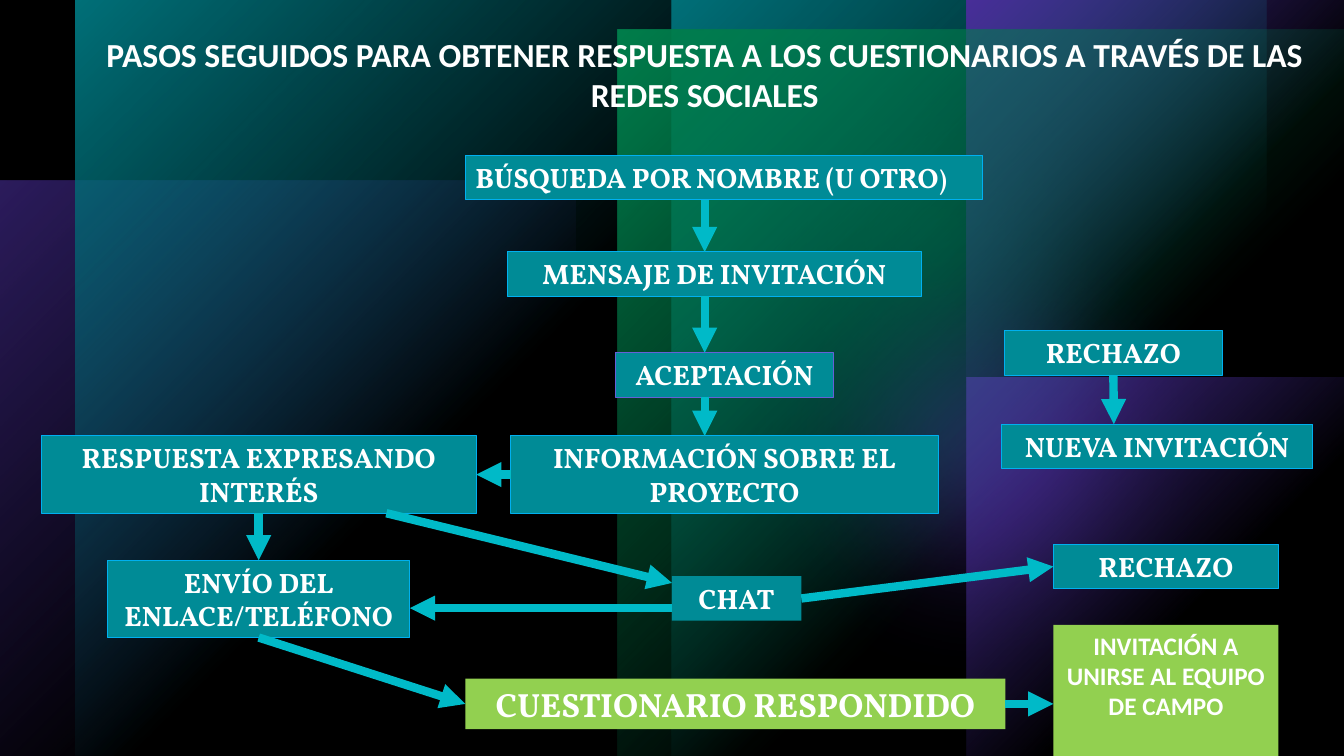
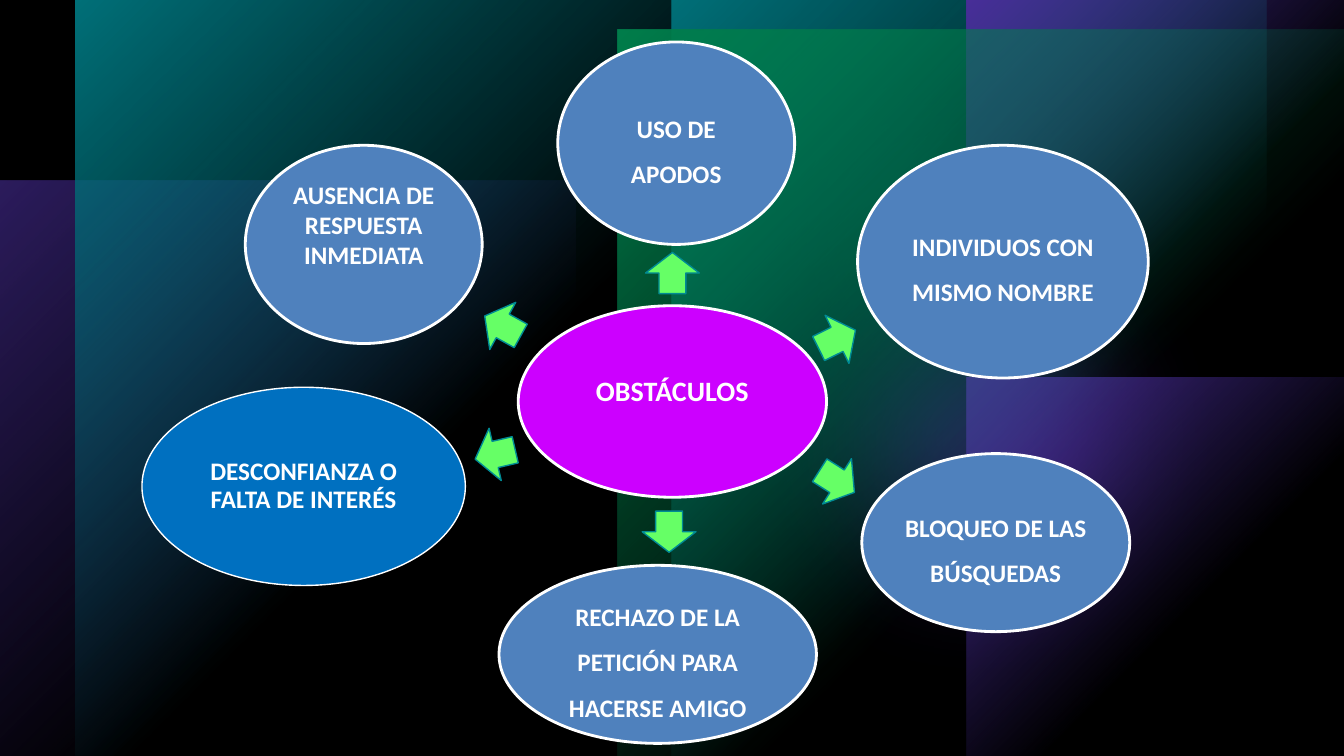
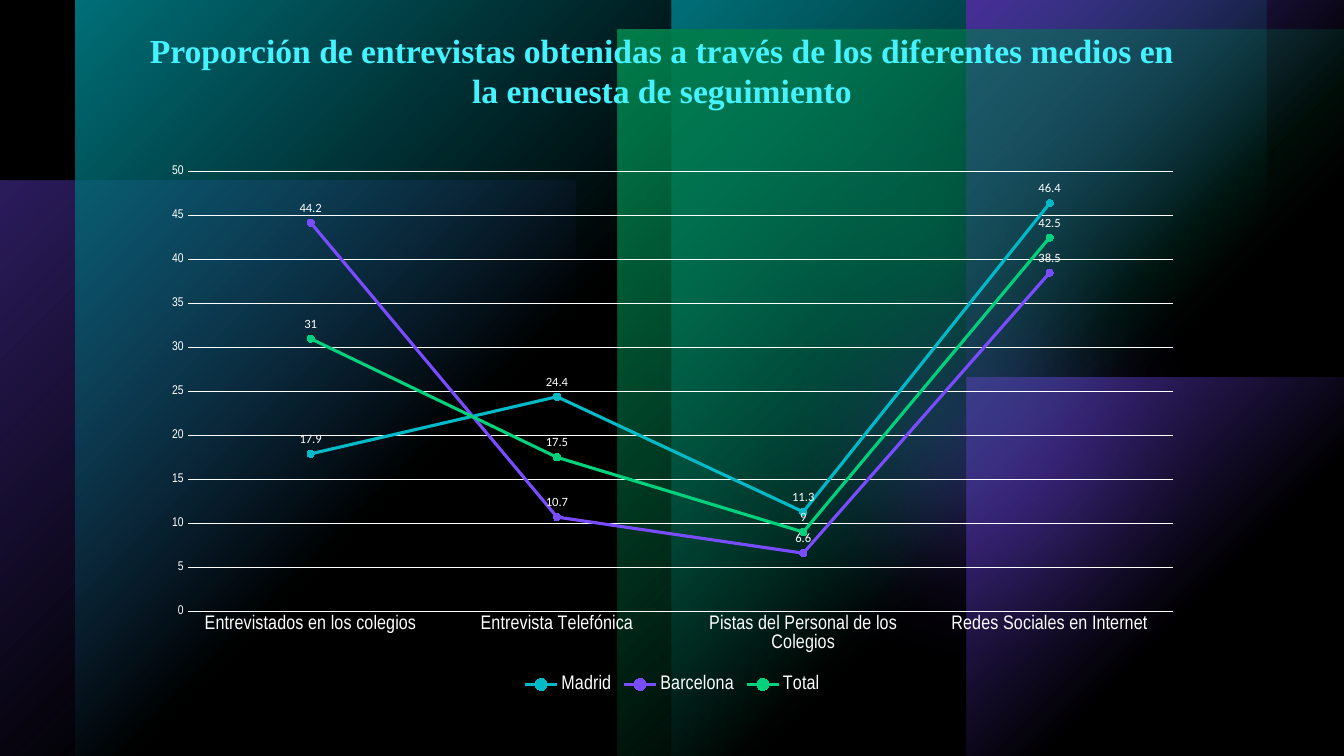
from collections import namedtuple

from lxml.etree import SubElement
from pptx import Presentation
from pptx.chart.data import CategoryChartData
from pptx.dml.color import RGBColor
from pptx.enum.chart import XL_CHART_TYPE as ChartType
from pptx.enum.chart import XL_LABEL_POSITION as LabelPosition
from pptx.enum.chart import XL_LEGEND_POSITION as LegendPosition
from pptx.enum.chart import XL_MARKER_STYLE as Marker
from pptx.enum.chart import XL_TICK_MARK as TickMark
from pptx.enum.shapes import MSO_CONNECTOR as Connector
from pptx.enum.shapes import MSO_SHAPE as Preset
from pptx.enum.text import MSO_ANCHOR as Anchor
from pptx.enum.text import MSO_AUTO_SIZE as AutoSize
from pptx.enum.text import PP_ALIGN as Align
from pptx.oxml import parse_xml
from pptx.oxml.ns import nsdecls, qn
from pptx.util import Emu, Inches, Pt

COLORS = {
    "black": "000000", "white": "FFFFFF",
    "teal": "00BAC8", "violet": "794DFF", "green": "00D17D",
    "step": "008B96", "step_edge": "00B0F0", "accepted_edge": "655FD7",
    "result": "92D050", "bubble": "4F81BD", "distrust": "0070C0",
    "obstacles": "CC00FF", "pointer": "66FF66", "pointer_edge": "008A94",
    "chart_title": "45F2FF",
}
BODY, STEP, AXIS, SERIF = "Calibri", "Vollkorn", "Arial Narrow", "Times New Roman"

# The slide is a grid of 160 columns by 90 rows of square cells.
CELL = 76200
COLUMNS, ROWS = 160, 90
JOIN_REACH = 0.3


def cells(count):
    return Emu(round(count * CELL))


class Box(namedtuple("Box", "x y w h")):
    """A rectangle in grid cells."""

    def inner(self, x, y, w, h):
        return Box(self.x + x, self.y + y, w, h)

    def emu(self):
        return [cells(value) for value in self]

    def side_middles(self):
        """Middles of the sides, in connection order: top, left, bottom, right."""
        mid_x, mid_y = self.x + self.w / 2, self.y + self.h / 2
        return [(mid_x, self.y), (self.x, mid_y),
                (mid_x, self.y + self.h), (self.x + self.w, mid_y)]


SLIDE = Box(0, 0, COLUMNS, ROWS)


def rgb(name):
    return RGBColor.from_string(COLORS[name])


def paint(shape, fill, edge=None, width=0.75):
    shape.shadow.inherit = False
    shape.fill.solid()
    shape.fill.fore_color.rgb = rgb(fill)
    if edge:
        shape.line.color.rgb = rgb(edge)
        shape.line.width = Pt(width)
    else:
        shape.line.fill.background()


def style_font(font, name, size, color="white", bold=None):
    font.name, font.size, font.bold = name, Pt(size), bold
    font.color.rgb = rgb(color)


def write(shape, runs, font, color="white", align=Align.CENTER, anchor=Anchor.TOP):
    """Fill a shape with one bold paragraph made of (text, size) runs."""
    frame = shape.text_frame
    frame.word_wrap = True
    frame.vertical_anchor = anchor
    paragraph = frame.paragraphs[0]
    paragraph.alignment = align
    for text, size in runs:
        run = paragraph.add_run()
        run.text = text
        style_font(run.font, font, size, color, True)
    return paragraph


def set_alpha(shape, percent):
    color = shape.element.spPr.find(qn("a:solidFill"))[0]
    SubElement(color, qn("a:alpha")).set("val", str(percent * 1000))


def corner_glow(shape, color, alpha):
    """Radial gradient that fades out from the top left corner."""
    shape.fill.background()
    stops = "".join(
        f'<a:gs pos="{pos}000"><a:srgbClr val="{COLORS[color]}">'
        f'<a:alpha val="{opacity}000"/></a:srgbClr></a:gs>'
        for pos, opacity in ((0, alpha), (60, 0)))
    gradient = parse_xml(
        f'<a:gradFill {nsdecls("a")} rotWithShape="1"><a:gsLst>{stops}</a:gsLst>'
        '<a:path path="circle"><a:fillToRect r="100000" b="100000"/></a:path>'
        '</a:gradFill>')
    properties = shape.element.spPr
    properties.replace(properties.find(qn("a:noFill")), gradient)


def build_backdrop(master, slide):
    """Draw the shared backdrop on a slide, then move it to the master."""
    master.background.fill.solid()
    master.background.fill.fore_color.rgb = rgb("black")
    lights = slide.shapes.add_group_shape()

    def glow_panel(box, color, alpha=100, turn=0, flip=False):
        panel = lights.shapes.add_shape(Preset.RECTANGLE, *Box(*box).emu())
        paint(panel, color)
        corner_glow(panel, color, alpha)
        panel.rotation = turn
        if flip:
            panel.element.spPr.find(qn("a:xfrm")).set("flipH", "1")

    def soft_spot(box, color, alpha):
        spot = lights.shapes.add_shape(Preset.OVAL, *Box(*box).emu())
        paint(spot, color)
        set_alpha(spot, alpha)
        effects = spot.element.spPr.find(qn("a:effectLst"))
        SubElement(effects, qn("a:softEdge")).set("rad", "1270000")

    glow_panel((0, 21.5, 68.5, 68.5), "violet", 60, 270)
    soft_spot((83.8, 0, 56.6, 56.6), "green", 96)
    soft_spot((80.3, 16.2, 72.2, 72.2), "violet", 60)
    glow_panel((79.9, 0, 70.9, ROWS), "teal")
    glow_panel((9, 0, 70.9, ROWS), "teal", flip=True)
    glow_panel((115, 45, 45, 45), "violet", turn=90)
    glow_panel((115, 0, 45, 45), "violet", turn=90, flip=True)
    glow_panel((73.5, 3.5, 86.5, 86.5), "green", turn=180)
    veil = slide.shapes.add_shape(Preset.RECTANGLE, *SLIDE.emu())
    paint(veil, "black")
    set_alpha(veil, 40)

    tree = master.shapes.element
    next_id = 100
    for position, part in enumerate((lights, veil), 2):
        for properties in part.element.iter(qn("p:cNvPr")):
            properties.set("id", str(next_id))
            next_id += 1
        tree.insert(position, part.element)


def add_title(slide, box, text, font, color):
    title = slide.shapes.title
    title.left, title.top, title.width, title.height = box.emu()
    write(title, [(text, 24)], font, color)
    title.text_frame.auto_size = AutoSize.SHAPE_TO_FIT_TEXT


ONE_LINE, TWO_LINES = 5.3, 9.2
STEPS = [
    # x, y, w, h, text
    (60.4, 15, 49.3, ONE_LINE, "MENSAJE DE INVITACIÓN"),
    (73.3, 27, 25.9, ONE_LINE, "ACEPTACIÓN"),
    (119.6, 24.4, 25.9, ONE_LINE, "RECHAZO"),
    (119.2, 35.5, 37.1, ONE_LINE, "NUEVA INVITACIÓN"),
    (60.8, 36.9, 50.9, TWO_LINES, "INFORMACIÓN SOBRE EL PROYECTO"),
    (4.9, 36.9, 51.8, TWO_LINES, "RESPUESTA EXPRESANDO INTERÉS"),
    (12.8, 51.7, 36, TWO_LINES, "ENVÍO DEL ENLACE/TELÉFONO"),
    (80, 53.6, 15.4, ONE_LINE, "CHAT"),
    (125.4, 49.8, 26.8, ONE_LINE, "RECHAZO"),
]
EDGES = {"ACEPTACIÓN": "accepted_edge", "CHAT": None}
FLOWS = [
    # x and y of the start, x and y of the end, each on the edge of a step
    (83.9, 8.8, 83.9, 15), (83.9, 20.3, 83.9, 27), (83.9, 32.3, 83.9, 36.9),
    (30.8, 46.1, 30.8, 51.7), (132.6, 29.7, 132.6, 35.5),
    (60.8, 41.5, 56.7, 41.5), (46, 46.1, 80, 54.4), (95.4, 56.3, 125.4, 52.4),
    (80, 57.4, 48.8, 57.4), (30.8, 60.9, 55.4, 68.8),
    (119.7, 68.8, 125.4, 68.8),
]


def add_flowchart(slide, area):
    placed = []

    def step(place, runs, fill="step", edge="step_edge", font=STEP, align=Align.CENTER):
        box = area.inner(*place)
        shape = slide.shapes.add_shape(Preset.RECTANGLE, *box.emu())
        paint(shape, fill, edge)
        write(shape, runs, font, align=align)
        shape.text_frame.auto_size = AutoSize.SHAPE_TO_FIT_TEXT
        placed.append((box, shape))

    def join(connect, x, y):
        """Join an arrow end that meets the middle of a step's side."""
        for box, shape in placed:
            for site, (site_x, site_y) in enumerate(box.side_middles()):
                if max(abs(site_x - x), abs(site_y - y)) < JOIN_REACH:
                    connect(shape, site)
                    return

    step((55.4, 3.5, 61.6, ONE_LINE),
         [("BÚSQUEDA POR NOMBRE (U OTRO", 20), (")", 18)], align=Align.LEFT)
    for *place, text in STEPS:
        step(place, [(text, 20)], edge=EDGES.get(text, "step_edge"))
    step((55.4, 65.8, 64.3, 6), [("CUESTIONARIO RESPONDIDO", 24)], "result", None)
    step((125.4, 59.4, 26.8, 15.7),
         [("INVITACIÓN A UNIRSE AL EQUIPO DE CAMPO", 18)], "result", None, BODY)

    for x1, y1, x2, y2 in FLOWS:
        start = (area.x + x1, area.y + y1)
        end = (area.x + x2, area.y + y2)
        arrow = slide.shapes.add_connector(
            Connector.STRAIGHT, *map(cells, start + end))
        arrow.line.color.rgb = rgb("teal")
        arrow.line.width = Pt(6)
        properties = arrow.element.spPr
        SubElement(properties.find(qn("a:ln")), qn("a:tailEnd")).set("type", "triangle")
        SubElement(properties, qn("a:effectLst"))
        join(arrow.begin_connect, *start)
        join(arrow.end_connect, *end)


BUBBLES = [
    # x, y, w, h, text, fill, edge width, line spacing
    (66.4, 5, 28.2, 24.1, "USO DE APODOS", "bubble", 2, 1.5),
    (102.1, 17.3, 34.6, 27.7, "INDIVIDUOS CON MISMO NOMBRE", "bubble", 2, 1.5),
    (102.6, 54, 31.9, 21.2, "BLOQUEO DE LAS BÚSQUEDAS", "bubble", 2, 1.5),
    (59.4, 67.3, 37.8, 21.2, "RECHAZO DE LA PETICIÓN PARA HACERSE AMIGO",
     "bubble", 2, 1.5),
    (16.9, 46.1, 38.5, 23.6, "DESCONFIANZA O FALTA DE INTERÉS",
     "distrust", 1, 0.9),
]
POINTERS = [
    # x, y, rotation
    (56.5, 50.9, 166.9), (57.4, 35.6, 208.9), (97.2, 37.2, 333.6),
    (77.6, 29.3, 270), (97.2, 54.1, 32.5), (77.2, 60.1, 90),
]


def add_obstacle_map(slide, area):
    def bubble(place, text, size, fill, width=2, anchor=Anchor.TOP):
        oval = slide.shapes.add_shape(Preset.OVAL, *area.inner(*place).emu())
        paint(oval, fill, "white", width)
        return oval, write(oval, [(text, size)], BODY, anchor=anchor)

    bubble((29.2, 17.3, 28.2, 23.6), "AUSENCIA DE RESPUESTA INMEDIATA", 18, "bubble")
    center, _ = bubble((61.7, 36.4, 36.7, 22.8), "OBSTÁCULOS", 20, "obstacles")
    center.text_frame.margin_top = Inches(0.39)

    for *place, text, fill, width, spacing in BUBBLES:
        oval, paragraph = bubble(place, text, 18, fill, width, Anchor.MIDDLE)
        frame = oval.text_frame
        frame.margin_left = frame.margin_right = Inches(0.02)
        frame.margin_top = frame.margin_bottom = Inches(0.02)
        paragraph.line_spacing = spacing
        paragraph.space_after = Pt(6.3)

    for x, y, turn in POINTERS:
        pointer = slide.shapes.add_shape(
            Preset.RIGHT_ARROW, *area.inner(x, y, 4.9, 6.4).emu())
        paint(pointer, "pointer", "pointer_edge", 1)
        pointer.rotation = turn


CHANNELS = ["Entrevistados en los colegios", "Entrevista Telefónica",
            "Pistas del Personal de los Colegios", "Redes Sociales en Internet"]
INTERVIEWS = [
    ("Madrid", (17.9, 24.4, 11.3, 46.4), "teal"),
    ("Barcelona", (44.2, 10.7, 6.6, 38.5), "violet"),
    ("Total", (31, 17.5, 9, 42.5), "green"),
]


def add_interview_chart(slide, box):
    data = CategoryChartData()
    data.categories = CHANNELS
    for name, values, _ in INTERVIEWS:
        data.add_series(name, values)
    chart = slide.shapes.add_chart(ChartType.LINE_MARKERS, *box.emu(), data).chart
    style_font(chart.font, BODY, 10)
    chart.has_title = False
    chart.has_legend = True
    chart.legend.position = LegendPosition.BOTTOM
    chart.legend.include_in_layout = False
    style_font(chart.legend.font, AXIS, 14)

    channels, shares = chart.category_axis, chart.value_axis
    for axis, size in ((channels, 14), (shares, 9)):
        axis.major_tick_mark = axis.minor_tick_mark = TickMark.NONE
        style_font(axis.tick_labels.font, AXIS, size)
    shares.minimum_scale, shares.maximum_scale, shares.major_unit = 0, 50, 5
    shares.has_major_gridlines = True
    shares.format.line.fill.background()
    for line in (channels.format.line, shares.major_gridlines.format.line):
        line.color.rgb = rgb("white")
        line.width = Pt(0.75)

    plot = chart.plots[0]
    plot.vary_by_categories = False
    for series, (_, _, color) in zip(plot.series, INTERVIEWS):
        series.smooth = False
        series.format.line.color.rgb = rgb(color)
        series.format.line.width = Pt(2.25)
        marker = series.marker
        marker.style, marker.size = Marker.CIRCLE, 5
        marker.format.fill.solid()
        marker.format.fill.fore_color.rgb = rgb(color)
        marker.format.line.color.rgb = rgb(color)
        labels = series.data_labels
        labels.show_value = True
        labels.position = LabelPosition.ABOVE
        style_font(labels.font, BODY, 9)


def main():
    deck = Presentation()
    deck.slide_width, deck.slide_height = cells(COLUMNS), cells(ROWS)
    title_only, blank = deck.slide_layouts[5], deck.slide_layouts[6]

    steps = deck.slides.add_slide(title_only)
    build_backdrop(deck.slide_master, steps)
    add_title(steps, SLIDE.inner(11.4, 3.4, 145, 10.9),
              "PASOS SEGUIDOS PARA OBTENER RESPUESTA A LOS CUESTIONARIOS "
              "A TRAVÉS DE LAS REDES SOCIALES", BODY, "white")
    add_flowchart(steps, SLIDE.inner(0, 15, COLUMNS, 75))

    add_obstacle_map(deck.slides.add_slide(blank), SLIDE)

    results = deck.slides.add_slide(title_only)
    add_title(results, SLIDE.inner(15.5, 2.9, 126.6, 10.9),
              "Proporción de entrevistas obtenidas a través de los diferentes "
              "medios en la encuesta de seguimiento", SERIF, "chart_title")
    add_interview_chart(results, SLIDE.inner(18, 18.4, 124.1, 64.7))

    deck.save("out.pptx")


if __name__ == "__main__":
    main()
